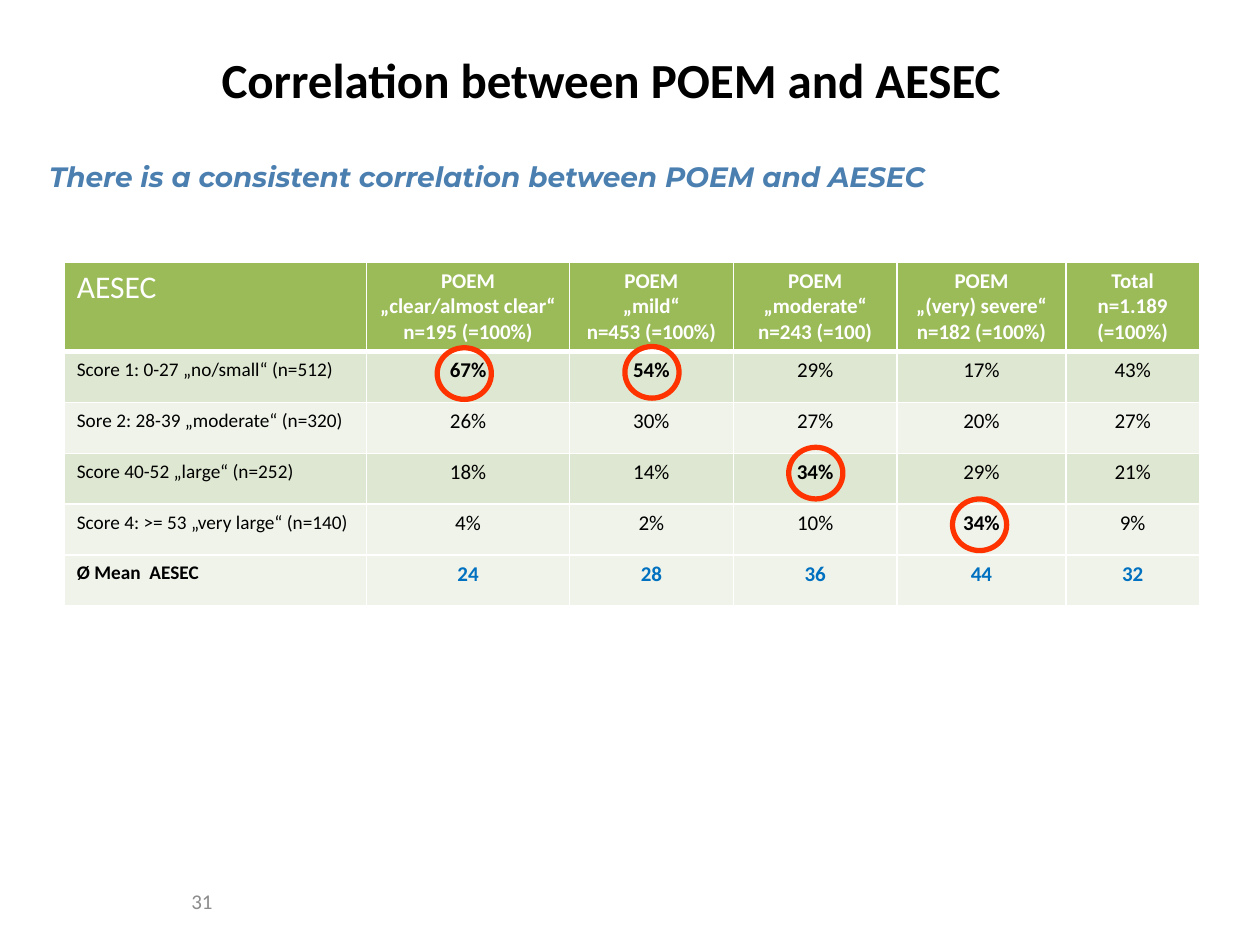
from lxml import etree
from pptx import Presentation
from pptx.dml.color import RGBColor
from pptx.enum.shapes import MSO_SHAPE
from pptx.enum.text import MSO_ANCHOR, PP_ALIGN
from pptx.oxml.ns import qn
from pptx.util import Inches, Pt

LEFT, CENTER = PP_ALIGN.LEFT, PP_ALIGN.CENTER
TOP, MIDDLE = MSO_ANCHOR.TOP, MSO_ANCHOR.MIDDLE
OVAL = MSO_SHAPE.OVAL

BLACK = RGBColor(0x00, 0x00, 0x00)
WHITE = RGBColor(0xFF, 0xFF, 0xFF)
GREY = RGBColor(0x8C, 0x8C, 0x8C)
STEEL = RGBColor(0x4A, 0x7F, 0xB0)
BLUE = RGBColor(0x00, 0x70, 0xC0)
GREEN = RGBColor(0x9B, 0xBB, 0x59)
BAND_DARK = RGBColor(0xDE, 0xE7, 0xD1)
BAND_LIGHT = RGBColor(0xEF, 0xF3, 0xEA)
RED = RGBColor(0xFF, 0x33, 0x00)

COLUMN_WIDTHS = [2.4, 1.61, 1.3, 1.3, 1.34, 1.06]
HEADER_HEIGHT = 0.71
ROWS = [
    ["AESEC", "POEM\n„clear/almost clear“ n=195 (=100%)", "POEM\n„mild“\nn=453 (=100%)",
     "POEM „moderate“\nn=243 (=100)", "POEM\n„(very) severe“ n=182 (=100%)",
     "Total\nn=1.189 (=100%)"],
    ["Score 1: 0-27 „no/small“ (n=512)", "67%", "54%", "29%", "17%", "43%"],
    ["Sore 2: 28-39 „moderate“ (n=320)", "26%", "30%", "27%", "20%", "27%"],
    ["Score 40-52 „large“ (n=252)", "18%", "14%", "34%", "29%", "21%"],
    ["Score 4: >= 53 „very large“ (n=140)", "4%", "2%", "10%", "34%", "9%"],
    ["Ø Mean  AESEC", "24", "28", "36", "44", "32"],
]
ROW_FILLS = [GREEN, BAND_DARK, BAND_LIGHT, BAND_DARK, BAND_LIGHT, BAND_LIGHT]
HIGHLIGHTS = {(1, 1): (3.47, 2.76), (1, 2): (4.96, 2.75),
              (3, 3): (6.26, 3.55), (4, 4): (7.56, 3.96)}


def write_text(frame, text, look, align=LEFT):
    """Put each line of text in its own paragraph with one font look."""
    frame.word_wrap = True
    frame.text = text
    for para in frame.paragraphs:
        para.alignment = align
        font = para.runs[0].font
        for name, value in look.items():
            if name == "color":
                font.color.rgb = value
            else:
                setattr(font, name, value)


def add_text(page, box, text, look, align=LEFT, anchor=TOP, margins=None):
    frame = page.shapes.add_textbox(*map(Inches, box)).text_frame
    frame.vertical_anchor = anchor
    for side, value in (margins or {}).items():
        setattr(frame, f"margin_{side}", Inches(value))
    write_text(frame, text, look, align)


def cell_look(row, column):
    header, mean, label = row == 0, row == len(ROWS) - 1, column == 0
    if header:
        size, color, bold = (18 if label else 12), WHITE, not label
    else:
        size = 11 if label else 12
        color = BLUE if mean and not label else BLACK
        bold = mean or (row, column) in HIGHLIGHTS
    return {"name": "Calibri", "size": Pt(size), "bold": bold, "color": color}


def set_borders(cell, bottom_width):
    """Draw white borders; they must come before the fill in the cell XML."""
    properties = cell._tc.get_or_add_tcPr()
    widths = {"a:lnL": 1, "a:lnR": 1, "a:lnT": 1, "a:lnB": bottom_width}
    for index, (tag, width) in enumerate(widths.items()):
        line = etree.Element(qn(tag), w=str(Pt(width)))
        fill = etree.SubElement(line, qn("a:solidFill"))
        etree.SubElement(fill, qn("a:srgbClr"), val=str(WHITE))
        properties.insert(index, line)


def add_score_table(page, box):
    frame = page.shapes.add_table(len(ROWS), len(COLUMN_WIDTHS), *map(Inches, box))
    table = frame.table
    body_height = (box[3] - HEADER_HEIGHT) / (len(ROWS) - 1)
    for column, width in zip(table.columns, COLUMN_WIDTHS):
        column.width = Inches(width)
    for r, (texts, fill) in enumerate(zip(ROWS, ROW_FILLS)):
        table.rows[r].height = Inches(body_height if r else HEADER_HEIGHT)
        for c, text in enumerate(texts):
            cell = table.cell(r, c)
            cell.fill.solid()
            cell.fill.fore_color.rgb = fill
            set_borders(cell, 1 if r else 3)
            write_text(cell.text_frame, text, cell_look(r, c), CENTER if c else LEFT)


def add_highlight(page, left, top):
    ring = page.shapes.add_shape(OVAL, *map(Inches, (left, top, 0.43, 0.41)))
    ring.shadow.inherit = False
    ring.fill.background()
    ring.line.color.rgb = RED
    ring.line.width = Pt(3)


def main():
    deck = Presentation()
    deck.slide_width, deck.slide_height = Inches(10), Inches(7.5)
    page = deck.slides.add_slide(deck.slide_layouts[6])
    flush = dict.fromkeys(("left", "top", "right", "bottom"), 0)
    add_text(page, (0.28, 0.29, 9.14, 0.67), "Correlation between POEM and AESEC",
             {"name": "Calibri", "size": Pt(28), "bold": True, "color": BLACK},
             CENTER, MIDDLE, flush)
    add_text(page, (1.42, 6.95, 0.52, 0.4), "31",
             {"name": "Calibri", "size": Pt(12), "color": GREY}, anchor=MIDDLE)
    add_score_table(page, (0.51, 2.08, 9.02, 2.73))
    for left, top in HIGHLIGHTS.values():
        add_highlight(page, left, top)
    add_text(page, (0.39, 1.27, 9.21, 0.43),
             "There is a consistent correlation between POEM and AESEC",
             {"name": "Montserrat", "size": Pt(16), "bold": True, "italic": True,
              "color": STEEL}, margins={**flush, "bottom": 0.05})
    deck.save("out.pptx")


if __name__ == "__main__":
    main()
